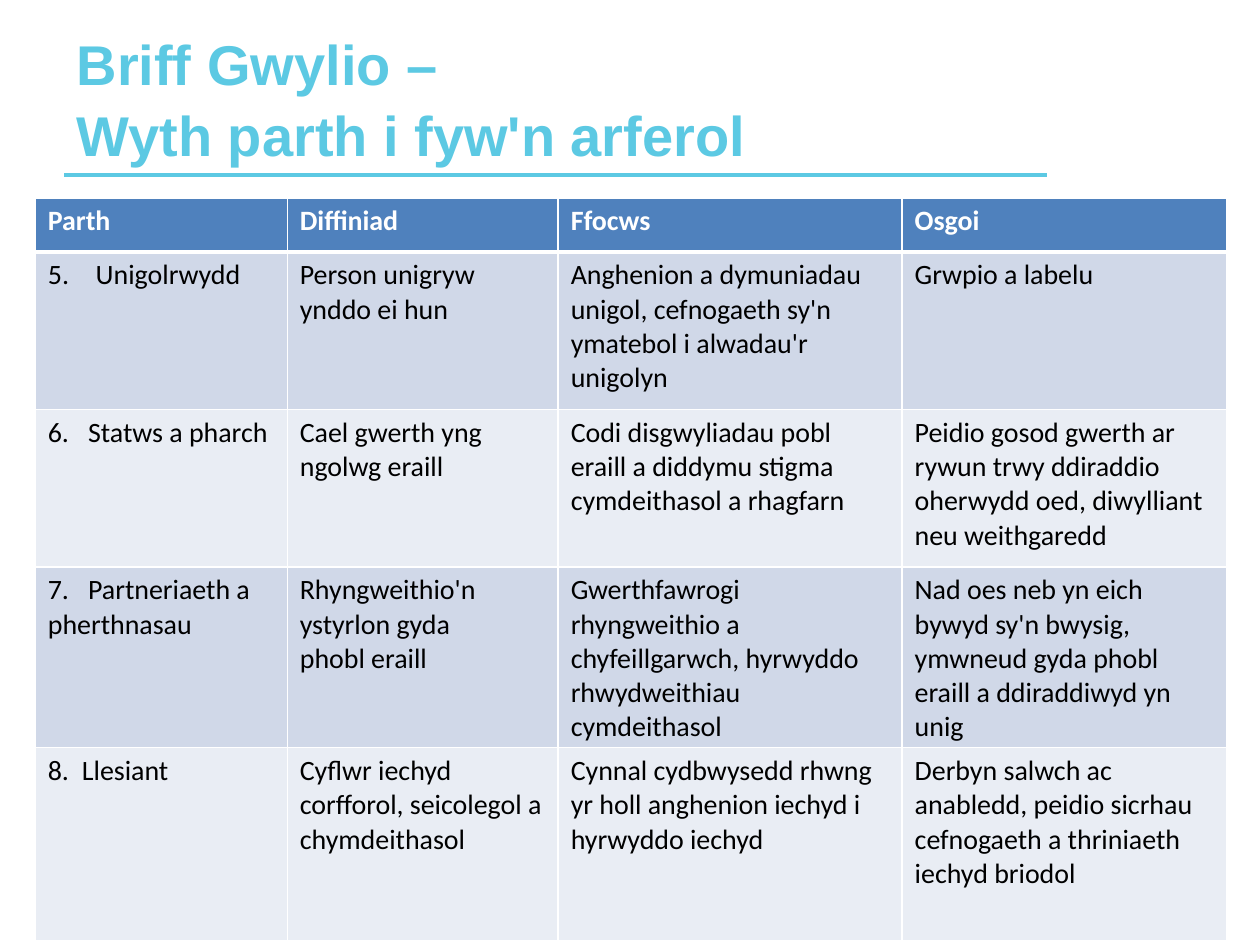
from lxml.etree import SubElement
from pptx import Presentation
from pptx.dml.color import RGBColor
from pptx.enum.shapes import MSO_CONNECTOR
from pptx.enum.text import MSO_ANCHOR
from pptx.oxml.ns import qn
from pptx.util import Inches, Pt

# Content
TITLE = ["Briff Gwylio –", "Wyth parth i fyw'n arferol"]
HEADER = ["Parth", "Diffiniad", "Ffocws", "Osgoi"]
ROWS = [
    ["Unigolrwydd", "Person unigryw ynddo ei hun",
     "Anghenion a dymuniadau unigol, cefnogaeth sy'n ymatebol i alwadau'r unigolyn",
     "Grwpio a labelu"],
    ["6.\tStatws a pharch", "Cael gwerth yng ngolwg eraill",
     "Codi disgwyliadau pobl eraill a diddymu stigma cymdeithasol a rhagfarn",
     "Peidio gosod gwerth ar rywun trwy ddiraddio oherwydd oed, diwylliant neu weithgaredd"],
    ["7.\tPartneriaeth a pherthnasau", "Rhyngweithio'n ystyrlon gyda\nphobl eraill",
     "Gwerthfawrogi rhyngweithio a chyfeillgarwch, hyrwyddo rhwydweithiau cymdeithasol",
     "Nad oes neb yn eich bywyd sy'n bwysig, ymwneud gyda phobl eraill a ddiraddiwyd yn unig"],
    ["8.\tLlesiant", "Cyflwr iechyd corfforol, seicolegol a chymdeithasol",
     "Cynnal cydbwysedd rhwng yr holl anghenion iechyd i hyrwyddo iechyd",
     "Derbyn salwch ac anabledd, peidio sicrhau cefnogaeth a thriniaeth iechyd briodol"],
]
TAB_STOPS = {2: 0.32, 3: 0.32, 4: 0.27}
COL_WIDTHS = [2, 2.15, 2.73, 2.58]
ROW_HEIGHTS = [0.43, 1.25, 1.25, 1.25, 1.53]
CYAN, WHITE, BLACK = "5CC9E3", "FFFFFF", "000000"
HEADER_FILL, BANDS = "4F81BD", ["D0D8E8", "E9EDF4"]


def color(value):
    return RGBColor.from_string(value)


def add_lines(p, lines, font, size, hex_color, bold):
    for i, line in enumerate(lines):
        if i:
            p.add_line_break()
        r = p.add_run()
        r.text = line
        r.font.name, r.font.size, r.font.bold = font, Pt(size), bold
        r.font.color.rgb = color(hex_color)


def set_number(p, start, indent):
    pPr = p._p.get_or_add_pPr()
    pPr.set("marL", str(Inches(indent)))
    pPr.set("indent", str(-Inches(indent)))
    SubElement(pPr, qn("a:buFont"), typeface="+mj-lt")
    SubElement(pPr, qn("a:buAutoNum"), type="arabicPeriod", startAt=str(start))


def set_tab(p, position):
    tabs = SubElement(p._p.get_or_add_pPr(), qn("a:tabLst"))
    SubElement(tabs, qn("a:tab"), pos=str(Inches(position)), algn="l")


def set_borders(cell, widths):
    tcPr = cell._tc.get_or_add_tcPr()
    for i, (side, width) in enumerate(widths.items()):
        ln = tcPr.makeelement(qn("a:" + side), {"w": str(Pt(width))})
        fill = SubElement(ln, qn("a:solidFill"))
        SubElement(fill, qn("a:srgbClr"), val=WHITE)
        tcPr.insert(i, ln)


prs = Presentation()
prs.slide_width, prs.slide_height = Inches(10), Inches(7.5)
s = prs.slides.add_slide(prs.slide_layouts[6])

# Title and rule
rule = s.shapes.add_connector(MSO_CONNECTOR.STRAIGHT, Inches(0.51), Inches(1.39),
                              Inches(8.31), Inches(1.39))
rule.line.color.rgb = color(CYAN)
rule.line.width = Pt(2)
SubElement(rule._element.spPr, qn("a:effectLst"))

title = s.shapes.add_textbox(Inches(0.51), Inches(0.29), Inches(7.8), Inches(1.09))
tf = title.text_frame
tf.word_wrap = True
tf.vertical_anchor = MSO_ANCHOR.BOTTOM
tf.paragraphs[0].line_spacing = 1.05
add_lines(tf.paragraphs[0], TITLE, "Arial", 32, CYAN, True)

# Table of domains
table = s.shapes.add_table(len(ROW_HEIGHTS), len(COL_WIDTHS), Inches(0.28), Inches(1.57),
                           Inches(sum(COL_WIDTHS)), Inches(sum(ROW_HEIGHTS))).table
for column, width in zip(table.columns, COL_WIDTHS):
    column.width = Inches(width)
for row, height in zip(table.rows, ROW_HEIGHTS):
    row.height = Inches(height)

for i, texts in enumerate([HEADER] + ROWS):
    is_header = i == 0
    for j, text in enumerate(texts):
        cell = table.cell(i, j)
        cell.fill.solid()
        cell.fill.fore_color.rgb = color(HEADER_FILL if is_header else BANDS[(i - 1) % 2])
        set_borders(cell, {"lnL": 1, "lnR": 1, "lnT": 3 if i == 1 else 1,
                           "lnB": 3 if is_header else 1})
        p = cell.text_frame.paragraphs[0]
        if j == 0 and i == 1:
            set_number(p, 5, 0.38)
        elif j == 0 and i in TAB_STOPS:
            set_tab(p, TAB_STOPS[i])
        add_lines(p, text.split("\n"), "Calibri", 16,
                  WHITE if is_header else BLACK, is_header)

prs.save("out.pptx")
